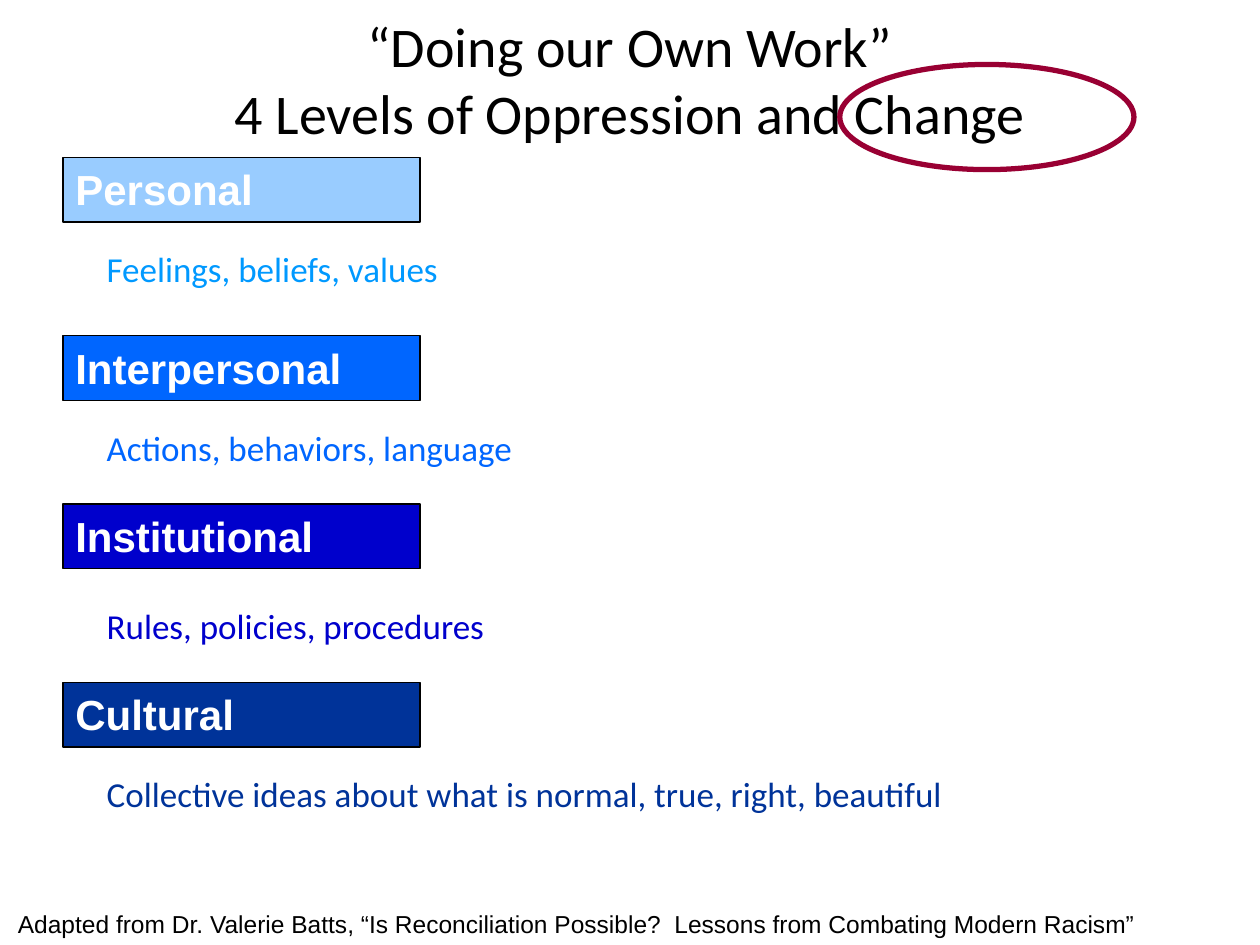
from pptx import Presentation
from pptx import util as u
from pptx.dml.color import RGBColor
from pptx.enum import shapes, text

HUES = {
    "black": "000000",
    "white": "FFFFFF",
    "pale": "99CCFF",
    "sky": "0099FF",
    "blue": "0066FF",
    "deep": "0000CC",
    "navy": "003399",
    "wine": "990033",
}

LEVELS = [
    ("Personal", "pale", 3.18, "Feelings, beliefs, values", "sky", 4.87, 21.59),
    ("Interpersonal", "blue", 6.77, "Actions, behaviors, language", "blue", 8.47, 21.59),
    ("Institutional", "deep", 10.16, "Rules, policies, procedures", "deep", 12.07, 21.59),
    ("Cultural", "navy", 13.76,
     "Collective ideas about what is normal, true, right, beautiful",
     "navy", 15.45, 23.07),
]


def hue(name):
    return RGBColor.from_string(HUES[name])


def place(*sides):
    return [u.Cm(side) for side in sides]


def write(shape, lines, font, size, color, bold=False,
          align=text.PP_ALIGN.LEFT, anchor=text.MSO_ANCHOR.TOP):
    frame = shape.text_frame
    frame.word_wrap = True
    frame.vertical_anchor = anchor
    para = frame.paragraphs[0]
    para.alignment = align
    for i, line in enumerate(lines):
        if i:
            para.add_line_break()
        run = para.add_run()
        run.text = line
        run.font.name = font
        run.font.size = u.Pt(size)
        run.font.bold = bold
        run.font.color.rgb = hue(color)


def add_text(slide, box, lines, font, size, color, **style):
    shape = slide.shapes.add_textbox(*place(*box))
    write(shape, lines, font, size, color, **style)


def add_form(slide, kind, box, line, width, fill=None):
    shape = slide.shapes.add_shape(kind, *place(*box))
    shape.shadow.inherit = False
    shape.line.color.rgb = hue(line)
    shape.line.width = u.Pt(width)
    if fill:
        shape.fill.solid()
        shape.fill.fore_color.rgb = hue(fill)
    else:
        shape.fill.background()
    return shape


def add_level(slide, name, fill, top, note, color, low, width):
    label = add_form(slide, shapes.MSO_SHAPE.RECTANGLE,
                     (1.27, top, 7.2, 1.3), "black", 0.75, fill)
    write(label, [name], "Arial", 24, "white", bold=True)
    add_text(slide, (1.9, low, width, 1.1), [note], "Calibri", 20, color)


def main():
    deck = Presentation()
    deck.slide_width, deck.slide_height = place(25.4, 19.05)
    slide = deck.slides.add_slide(deck.slide_layouts[6])
    add_text(slide, (0, 0, 25.4, 3.18),
             ["“Doing our Own Work”", "4 Levels of Oppression and Change"],
             "Calibri", 32, "black", align=text.PP_ALIGN.CENTER,
             anchor=text.MSO_ANCHOR.MIDDLE)
    for level in LEVELS:
        add_level(slide, *level)
    add_text(slide, (0, 18.2, 25.4, 0.85),
             [" Adapted from Dr. Valerie Batts, “Is Reconciliation Possible?  "
              "Lessons from Combating Modern Racism”"],
             "Arial", 14, "black")
    add_form(slide, shapes.MSO_SHAPE.OVAL, (16.93, 1.3, 5.93, 2.12), "wine", 3)
    deck.save("out.pptx")


if __name__ == "__main__":
    main()
